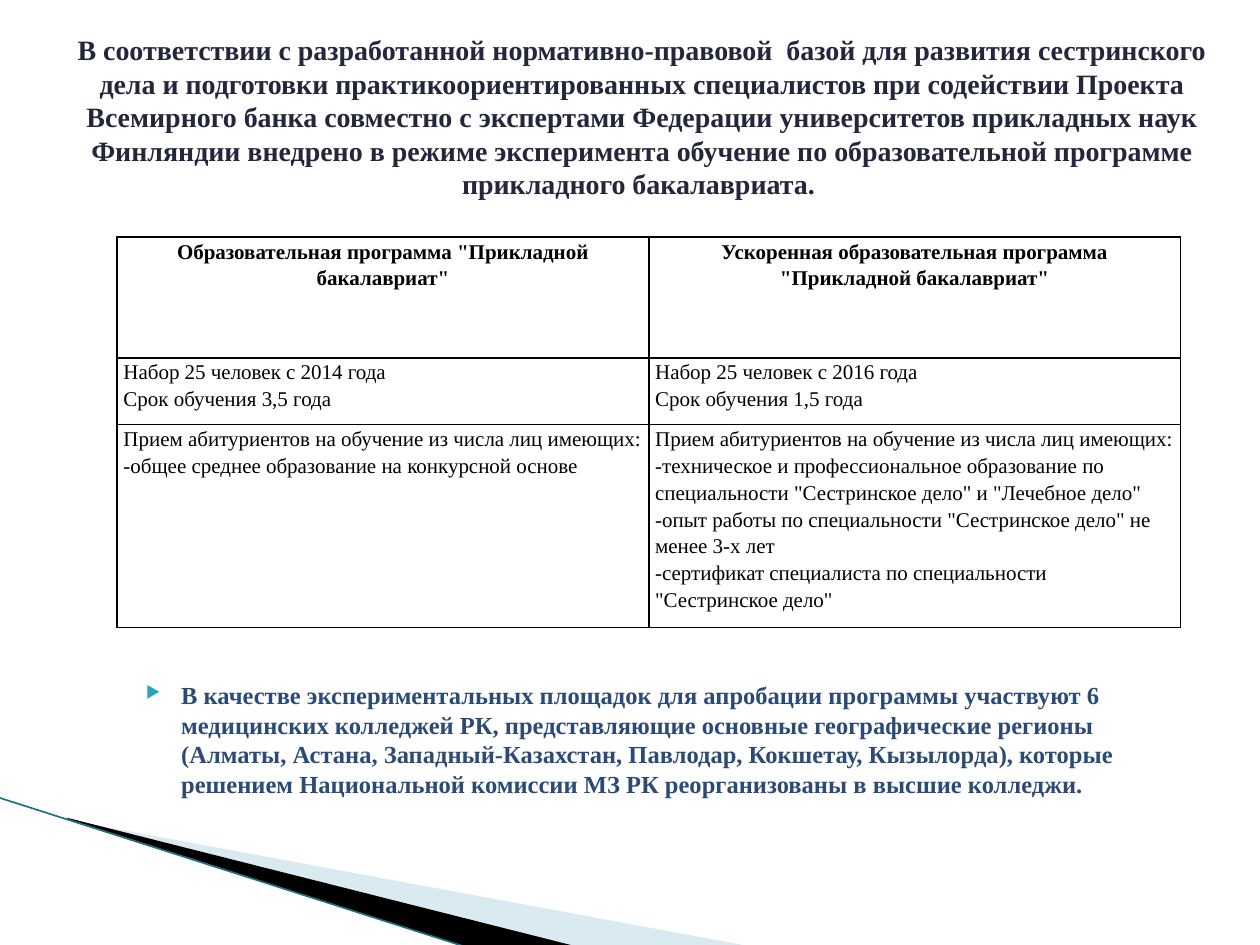
from typing import NamedTuple

from lxml import etree
from pptx import Presentation
from pptx import util as u
from pptx.dml.color import RGBColor
from pptx.enum import shapes, text
from pptx.oxml import ns

FONT = "Times New Roman"
BLACK = RGBColor(0x00, 0x00, 0x00)
TITLE_INK = RGBColor(0x24, 0x26, 0x3C)
NOTE_INK = RGBColor(0x2B, 0x4A, 0x76)
PALE_BLUE = RGBColor(0xA0, 0xCB, 0xDC)
EDGE_TEAL = RGBColor(0x1F, 0x6F, 0x86)
BULLET_TEAL = RGBColor(0x2D, 0xA2, 0xBF)

TITLE = (
    "В соответствии с разработанной нормативно-правовой  базой для развития "
    "сестринского дела и подготовки практикоориентированных специалистов при "
    "содействии Проекта Всемирного банка совместно с экспертами Федерации "
    "университетов прикладных наук Финляндии внедрено в режиме эксперимента "
    "обучение по образовательной программе прикладного бакалавриата. "
)
NOTE = (
    "В качестве экспериментальных площадок для апробации программы участвуют 6 "
    "медицинских колледжей РК, представляющие основные географические регионы "
    "(Алматы, Астана, Западный-Казахстан, Павлодар, Кокшетау, Кызылорда), которые "
    "решением Национальной комиссии МЗ РК реорганизованы в высшие колледжи."
)
ADMISSION = "Прием абитуриентов на обучение из числа лиц имеющих:"


class Wedge(NamedTuple):
    frame: tuple[float, float, float, float]
    points: list[tuple[float, float]]
    color: RGBColor
    opacity: int


class ProgramRow(NamedTuple):
    height: float
    standard: str
    accelerated: str


WEDGES = [
    Wedge((0.78, 5.47, 4.16, 1.58),
          [(0.55, 6.51), (5.95, 7.51), (4.56, 7.51), (0.55, 6.5)], PALE_BLUE, 40),
    Wedge((-0.06, 6.33, 4.16, 0.92),
          [(0.53, 6.49), (4.57, 7.51), (3.72, 7.52), (0.54, 6.5)], BLACK, 100),
]
PROGRAM_ROWS = [
    ProgramRow(
        0.96,
        'Образовательная программа "Прикладной бакалавриат"',
        'Ускоренная образовательная программа "Прикладной бакалавриат"',
    ),
    ProgramRow(
        0.53,
        "Набор 25 человек с 2014 года\nСрок обучения 3,5 года",
        "Набор 25 человек с 2016 года\nСрок обучения 1,5 года",
    ),
    ProgramRow(
        1.61,
        f"{ADMISSION}\n-общее среднее образование на конкурсной основе",
        f"{ADMISSION}\n-техническое и профессиональное образование по специальности "
        '"Сестринское дело" и "Лечебное дело"\n'
        '-опыт работы по специальности "Сестринское дело" не менее 3-х лет\n'
        '-сертификат специалиста по специальности "Сестринское дело"',
    ),
]


def style_text(frame, size: float, color: RGBColor, bold: bool, spacing, align=None) -> None:
    for paragraph in frame.paragraphs:
        paragraph.alignment = align
        paragraph.line_spacing = spacing
        for run in paragraph.runs:
            run.font.name = FONT
            run.font.size = u.Pt(size)
            run.font.bold = bold
            run.font.color.rgb = color


def add_text(slide, left: float, top: float, width: float, height: float, content: str):
    frame = slide.shapes.add_textbox(
        u.Inches(left), u.Inches(top), u.Inches(width), u.Inches(height)
    ).text_frame
    frame.word_wrap = True
    frame.text = content
    return frame


def add_bullet(paragraph) -> None:
    props = paragraph._p.get_or_add_pPr()
    props.set("marL", str(u.Inches(0.4)))
    props.set("indent", str(u.Inches(-0.28)))
    color = etree.SubElement(props, ns.qn("a:buClr"))
    etree.SubElement(color, ns.qn("a:srgbClr"), val=str(BULLET_TEAL))
    etree.SubElement(props, ns.qn("a:buSzPct"), val="68000")
    etree.SubElement(props, ns.qn("a:buChar"), char="▶")


def set_frame(shape, frame: tuple[float, float, float, float]) -> None:
    """Give a freeform its own frame; its outline stays in place and may cross it."""
    left, top, width, height = map(u.Inches, frame)
    outline = shape._element.spPr.find(".//" + ns.qn("a:path"))
    for point in outline.iter(ns.qn("a:pt")):
        point.set("x", str(int(point.get("x")) + shape.left - left))
        point.set("y", str(int(point.get("y")) + shape.top - top))
    outline.set("w", str(width))
    outline.set("h", str(height))
    shape.left, shape.top, shape.width, shape.height = left, top, width, height


def add_wedge(slide, wedge: Wedge) -> None:
    start, *others = [(u.Inches(x), u.Inches(y)) for x, y in wedge.points]
    builder = slide.shapes.build_freeform(*start)
    builder.add_line_segments(others)
    shape = builder.convert_to_shape()
    set_frame(shape, wedge.frame)
    shape.shadow.inherit = False
    shape.fill.solid()
    shape.fill.fore_color.rgb = wedge.color
    shape.line.fill.background()
    if wedge.opacity < 100:
        color = shape._element.spPr.find(".//" + ns.qn("a:srgbClr"))
        etree.SubElement(color, ns.qn("a:alpha"), val=str(wedge.opacity * 1000))


def add_edge(slide) -> None:
    edge = slide.shapes.add_connector(
        shapes.MSO_CONNECTOR.STRAIGHT,
        u.Inches(-0.01), u.Inches(6.33), u.Inches(3.71), u.Inches(7.52),
    )
    edge.line.color.rgb = EDGE_TEAL
    edge.line.width = u.Pt(0.95)
    etree.SubElement(edge._element.spPr, ns.qn("a:effectLst"))


def add_borders(cell) -> None:
    props = cell._tc.get_or_add_tcPr()
    for side in ("lnL", "lnR", "lnT", "lnB"):
        border = etree.SubElement(props, ns.qn(f"a:{side}"), w=str(u.Pt(1)))
        fill = etree.SubElement(border, ns.qn("a:solidFill"))
        etree.SubElement(fill, ns.qn("a:srgbClr"), val=str(BLACK))


def add_programs(slide, rows: list[ProgramRow]) -> None:
    programs = slide.shapes.add_table(
        len(rows), 2, u.Inches(0.93), u.Inches(1.88), u.Inches(8.44),
        u.Inches(sum(row.height for row in rows)),
    ).table
    programs.first_row = programs.horz_banding = False
    for index, row in enumerate(rows):
        programs.rows[index].height = u.Inches(row.height)
        heading = index == 0
        align = text.PP_ALIGN.CENTER if heading else text.PP_ALIGN.LEFT
        for column, content in enumerate((row.standard, row.accelerated)):
            cell = programs.cell(index, column)
            cell.margin_left = cell.margin_right = u.Inches(0.05)
            cell.margin_top = cell.margin_bottom = 0
            cell.text_frame.text = content
            style_text(cell.text_frame, 12, BLACK, heading, 1.15, align)
            add_borders(cell)
            cell.fill.background()


def main() -> None:
    deck = Presentation()
    deck.slide_width, deck.slide_height = u.Inches(10), u.Inches(7.5)
    slide = deck.slides.add_slide(deck.slide_layouts[6])

    # Corner decoration
    for wedge in WEDGES:
        add_wedge(slide, wedge)
    add_edge(slide)

    # Note on the pilot colleges
    note = add_text(slide, 0.94, 5.35, 8.5, 1.32, NOTE)
    add_bullet(note.paragraphs[0])
    style_text(note, 14, NOTE_INK, True, u.Pt(16.8))

    # Title
    title = add_text(slide, 0.5, 0.3, 9.19, 1.25, TITLE)
    title.vertical_anchor = text.MSO_ANCHOR.MIDDLE
    style_text(title, 16, TITLE_INK, True, u.Pt(19.2), text.PP_ALIGN.CENTER)

    # Comparison of the two programs
    add_programs(slide, PROGRAM_ROWS)

    deck.save("out.pptx")


if __name__ == "__main__":
    main()
